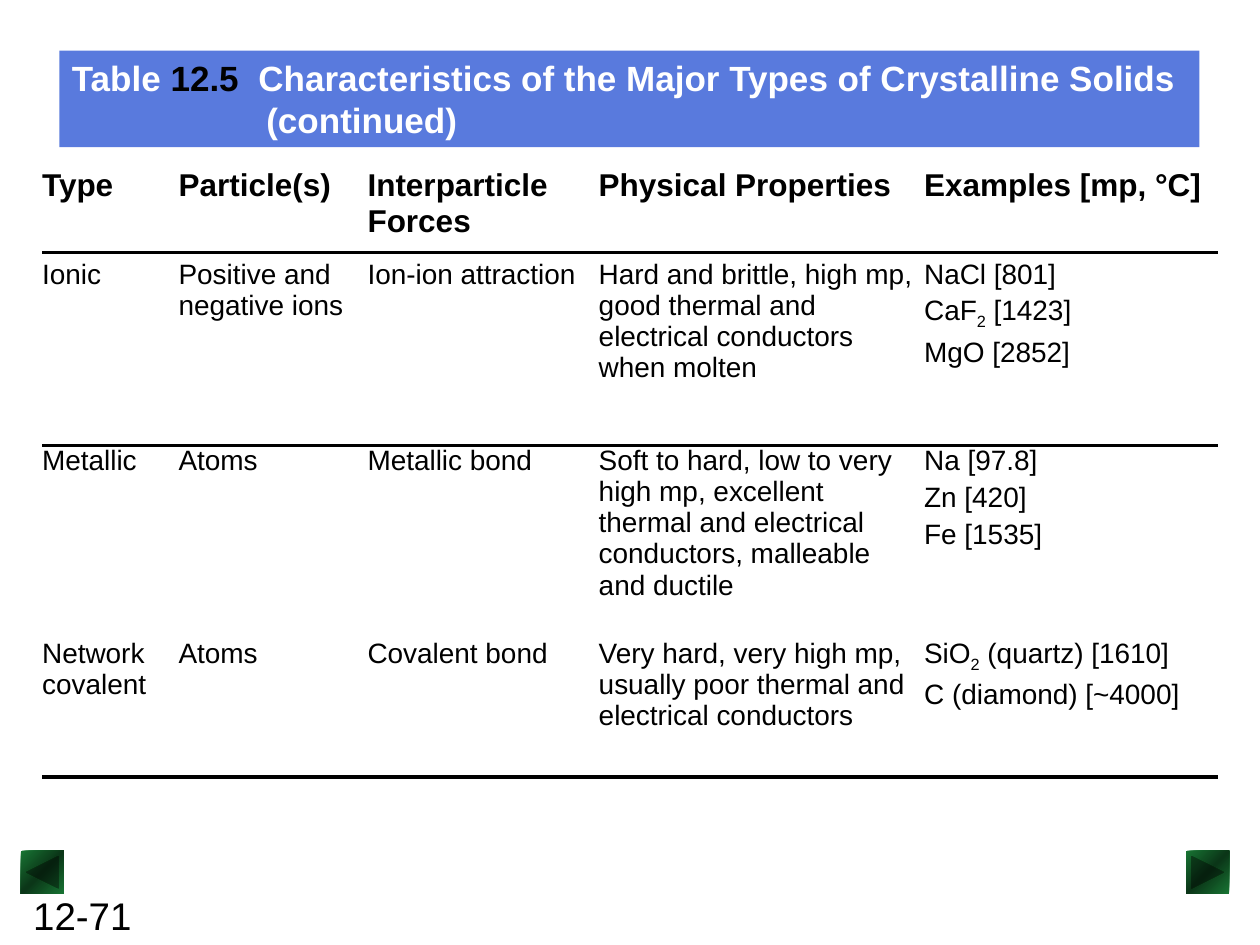
from lxml.etree import SubElement
from pptx import Presentation
from pptx.dml.color import RGBColor
from pptx.enum.shapes import MSO_SHAPE
from pptx.enum.text import PP_ALIGN, MSO_ANCHOR
from pptx.oxml import parse_xml
from pptx.oxml.ns import nsdecls, qn
from pptx.util import Cm, Pt

COLORS = {
    "ink": "000000",
    "white": "FFFFFF",
    "banner": "0033CC",
    "button": "187534",
    "button_dark": "0B3618",
}
PLAIN_TABLE = "{2D5ABB26-0587-4C30-8999-92F81FD0307C}"
COLUMN_WIDTHS = [2.75, 3.81, 4.66, 6.56, 5.92]
ROW_HEIGHTS = [1.7, 3.89, 3.89, 2.79]
RULED_ROWS = {0, 1, 3}
SOLIDS = [
    ["Type", "Particle(s)", "Interparticle Forces", "Physical Properties",
     "Examples [mp, °C]"],
    ["Ionic", "Positive and negative ions", "Ion-ion attraction",
     "Hard and brittle, high mp, good thermal and electrical conductors when molten",
     "NaCl [801]\nCaF|2| [1423]\nMgO [2852]"],
    ["Metallic", "Atoms", "Metallic bond",
     "Soft to hard, low to very high mp, excellent thermal and electrical "
     "conductors, malleable and ductile",
     "Na [97.8]\nZn [420]\nFe [1535]"],
    ["Network covalent", "Atoms", "Covalent bond",
     "Very hard, very high mp, usually poor thermal and electrical conductors",
     "SiO|2| (quartz) [1610]\nC (diamond) [~4000]"],
]


def write(paragraph, text, size=16, color="ink", bold=False):
    paragraph.alignment = PP_ALIGN.LEFT
    for index, piece in enumerate(text.split("|")):
        run = paragraph.add_run()
        run.text = piece
        run.font.name = "Arial"
        run.font.size = Pt(size)
        run.font.bold = bold
        run.font.color.rgb = RGBColor.from_string(COLORS[color])
        if index % 2:
            run.font._element.set("baseline", "-25000")


def add_banner(slide, left, top, width, height):
    banner = slide.shapes.add_shape(MSO_SHAPE.RECTANGLE, left, top, width, height)
    banner.shadow.inherit = False
    banner.line.fill.background()
    banner.fill.solid()
    banner.fill.fore_color.rgb = RGBColor.from_string(COLORS["banner"])
    tint = banner._element.spPr.find(qn("a:solidFill"))[0]
    SubElement(tint, qn("a:alpha"), val="65000")
    frame = banner.text_frame
    frame.word_wrap = True
    frame.vertical_anchor = MSO_ANCHOR.TOP
    title = frame.paragraphs[0]
    tabs = SubElement(title._p.get_or_add_pPr(), qn("a:tabLst"))
    SubElement(tabs, qn("a:tab"), pos=str(Cm(3.76)), algn="l")
    for text, color in (("Table ", "white"), ("12.5", "ink"),
                        ("\tCharacteristics of the Major Types of Crystalline Solids", "white")):
        write(title, text, size=20, color=color, bold=True)
    continuation = frame.add_paragraph()
    continuation._p.get_or_add_pPr().set("marL", str(Cm(3.92)))
    write(continuation, "(continued)", size=20, color="white", bold=True)


def rule_below(cell):
    cell._tc.get_or_add_tcPr().insert(0, parse_xml(
        f'<a:lnB {nsdecls("a")} w="{Pt(2.25)}"><a:solidFill>'
        f'<a:srgbClr val="{COLORS["ink"]}"/></a:solidFill></a:lnB>'))


def add_solids_table(slide, left, top, width, height):
    table = slide.shapes.add_table(
        len(ROW_HEIGHTS), len(COLUMN_WIDTHS), left, top, width, height).table
    table.first_row = table.horz_banding = False
    table._tbl.tblPr.find(qn("a:tableStyleId")).text = PLAIN_TABLE
    for column, column_width in zip(table.columns, COLUMN_WIDTHS):
        column.width = Cm(column_width)
    for row_index, (row, row_height) in enumerate(zip(table.rows, ROW_HEIGHTS)):
        row.height = Cm(row_height)
        header = row_index == 0
        for cell, content in zip(row.cells, SOLIDS[row_index]):
            cell.margin_left = cell.margin_right = cell.margin_bottom = 0
            cell.margin_top = Cm(0.13) if row_index == 1 else 0
            cell.fill.background()
            for line_index, line in enumerate(content.split("\n")):
                if line_index:
                    paragraph = cell.text_frame.add_paragraph()
                    paragraph.space_before = Pt(3.2)
                else:
                    paragraph = cell.text_frame.paragraphs[0]
                write(paragraph, line, size=18 if header else 16, bold=header)
            if row_index in RULED_ROWS:
                rule_below(cell)


def add_button(slide, kind, left, top, side):
    button = slide.shapes.add_shape(kind, left, top, side, side)
    button.shadow.inherit = False
    button.line.fill.background()
    button.fill.gradient()
    gradient = button._element.spPr.find(qn("a:gradFill"))
    stops = "".join(
        f'<a:gs pos="{position}"><a:srgbClr val="{COLORS[name]}"/></a:gs>'
        for position, name in ((0, "button"), (50000, "button_dark"), (100000, "button")))
    gradient.getparent().replace(gradient, parse_xml(
        f'<a:gradFill {nsdecls("a")} rotWithShape="1"><a:gsLst>{stops}</a:gsLst>'
        '<a:lin ang="2700000" scaled="1"/></a:gradFill>'))


def add_footer(slide, left, top, width, height):
    side = Cm(0.87)
    add_button(slide, MSO_SHAPE.ACTION_BUTTON_BACK_OR_PREVIOUS, left, top, side)
    add_button(slide, MSO_SHAPE.ACTION_BUTTON_FORWARD_OR_NEXT,
               left + width - side, top, side)
    number_height = Cm(1.19)
    page_number = slide.shapes.add_textbox(
        left, top + height - number_height, Cm(2.75), number_height).text_frame
    page_number.word_wrap = True
    write(page_number.paragraphs[0], "12-71", size=22)


def main():
    presentation = Presentation()
    presentation.slide_width = Cm(25.4)
    presentation.slide_height = Cm(19.05)
    slide = presentation.slides.add_slide(presentation.slide_layouts[6])
    add_footer(slide, Cm(0.42), Cm(17.15), Cm(24.36), Cm(1.9))
    add_solids_table(slide, Cm(0.85), Cm(3.39),
                     Cm(sum(COLUMN_WIDTHS)), Cm(sum(ROW_HEIGHTS)))
    add_banner(slide, Cm(1.2), Cm(1.02), Cm(22.98), Cm(1.95))
    presentation.save("out.pptx")


if __name__ == "__main__":
    main()
